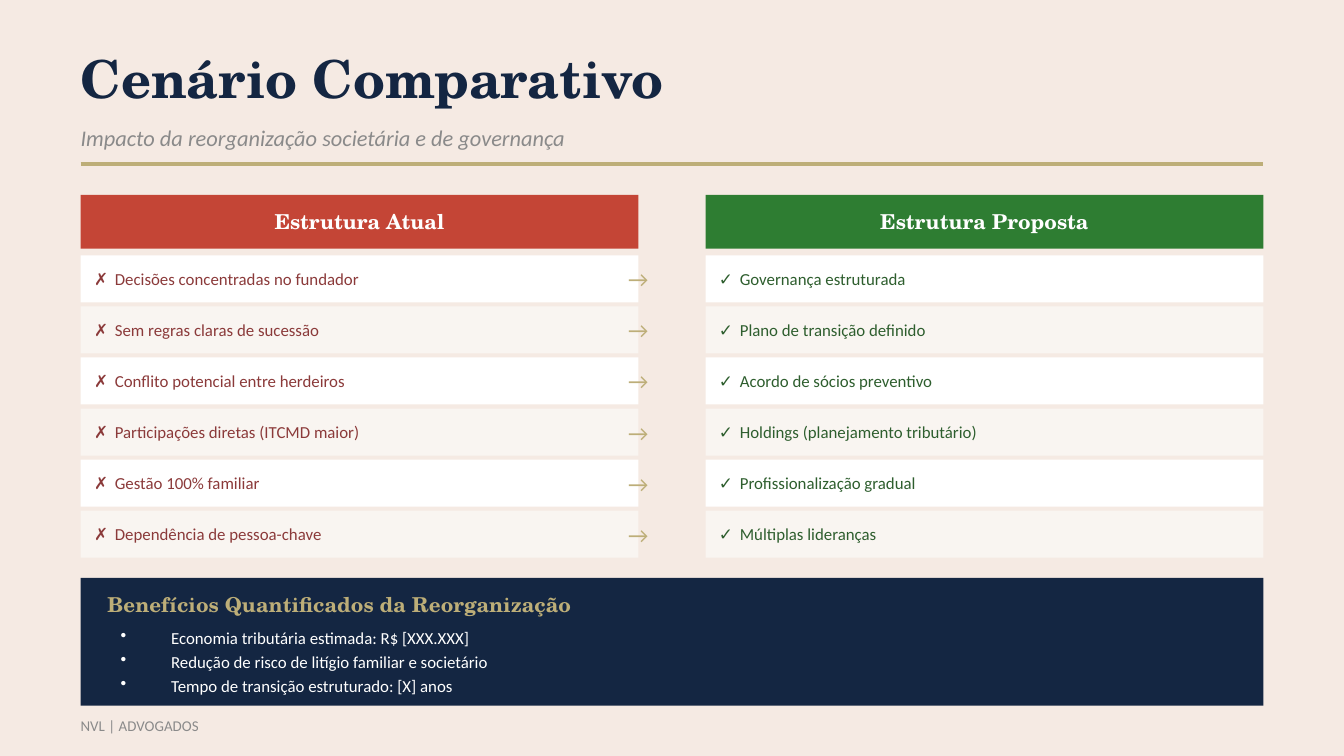
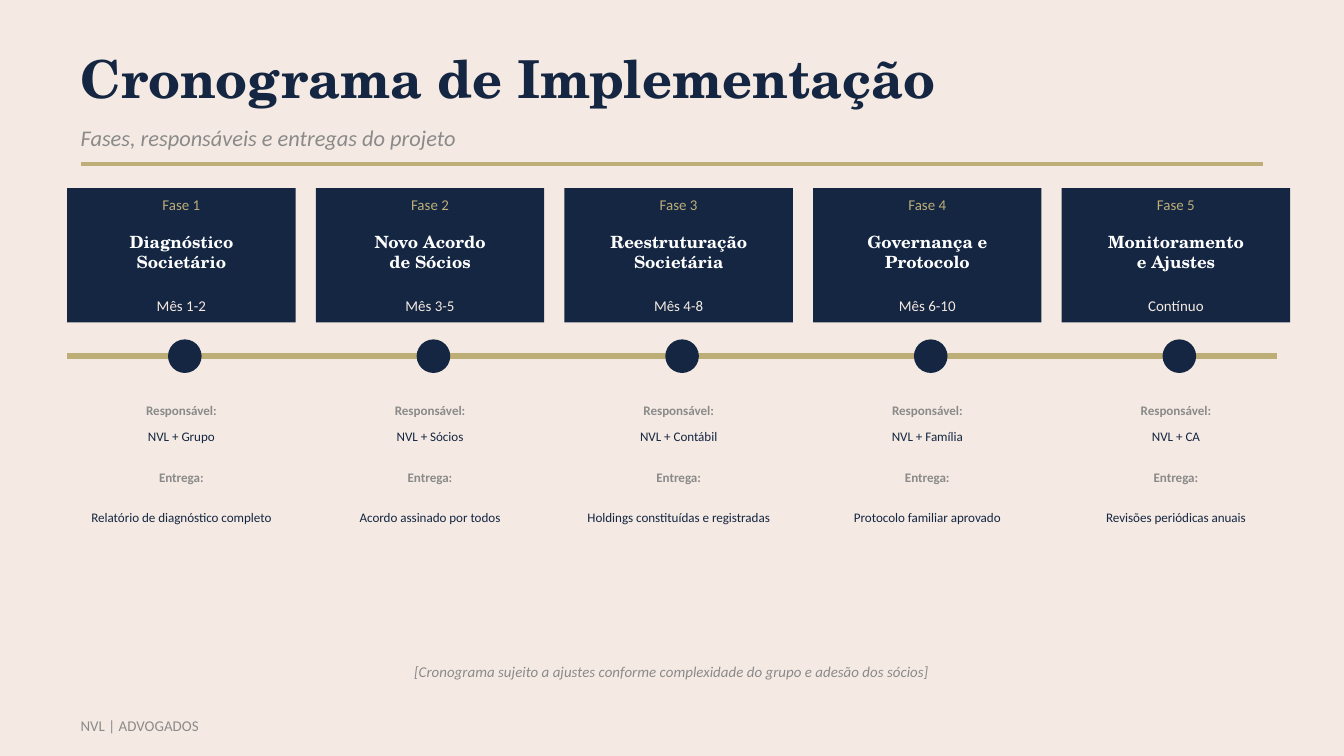
from dataclasses import dataclass
from typing import NamedTuple

from lxml.etree import SubElement
from pptx import Presentation
from pptx.dml.color import RGBColor
from pptx.enum.shapes import MSO_CONNECTOR, MSO_SHAPE
from pptx.enum.text import MSO_ANCHOR, PP_ALIGN
from pptx.oxml.ns import qn
from pptx.slide import Slide
from pptx.text.text import TextFrame
from pptx.util import Emu, Pt

EMU_PER_PX = 4572  # 200 px to the inch

COLOURS = {
    "background": "F5EAE3",
    "navy": "142642",
    "gold": "BDAE78",
    "grey": "8A8A8A",
    "white": "FFFFFF",
    "cream": "F9F5F1",
    "red": "C44536",
    "green": "2E7D32",
    "dark_red": "8B3A3A",
    "dark_green": "2E5E2E",
}
SERIF = "TeX Gyre Schola"
SANS = "Calibri"

MARGIN = 120
CONTENT_WIDTH = 1760


class Box(NamedTuple):
    left: int
    top: int
    width: int
    height: int


@dataclass(frozen=True)
class Style:
    size: int
    colour: str
    font: str = SANS
    bold: bool = False
    italic: bool = False
    align: PP_ALIGN = PP_ALIGN.LEFT


@dataclass(frozen=True)
class Scenario:
    left: int
    heading: str
    heading_fill: str
    mark: str
    item_colour: str
    items: tuple[str, ...]


@dataclass(frozen=True)
class Phase:
    title: tuple[str, ...]
    period: str
    owner: str
    delivery: str


CENTER = PP_ALIGN.CENTER
TITLE = Style(28, "navy", SERIF, bold=True)
SUBTITLE = Style(12, "grey", italic=True)
FOOTER = Style(8, "grey")
COLUMN_HEADING = Style(11, "white", SERIF, bold=True, align=CENTER)
ARROW = Style(12, "gold", align=CENTER)
BENEFITS_HEADING = Style(11, "gold", SERIF, bold=True)
BENEFIT = Style(9, "white")
PHASE_NUMBER = Style(8, "gold", align=CENTER)
PHASE_TITLE = Style(9, "white", SERIF, bold=True, align=CENTER)
PHASE_PERIOD = Style(8, "background", align=CENTER)
DETAIL_LABEL = Style(7, "grey", bold=True, align=CENTER)
DETAIL_VALUE = Style(7, "navy", align=CENTER)
NOTE = Style(8, "grey", italic=True, align=CENTER)

SCENARIOS = (
    Scenario(MARGIN, "Estrutura Atual", "red", "✗", "dark_red", (
        "Decisões concentradas no fundador",
        "Sem regras claras de sucessão",
        "Conflito potencial entre herdeiros",
        "Participações diretas (ITCMD maior)",
        "Gestão 100% familiar",
        "Dependência de pessoa-chave",
    )),
    Scenario(1050, "Estrutura Proposta", "green", "✓", "dark_green", (
        "Governança estruturada",
        "Plano de transição definido",
        "Acordo de sócios preventivo",
        "Holdings (planejamento tributário)",
        "Profissionalização gradual",
        "Múltiplas lideranças",
    )),
)
BENEFITS = (
    "Economia tributária estimada: R$ [XXX.XXX]",
    "Redução de risco de litígio familiar e societário",
    "Tempo de transição estruturado: [X] anos",
)
PHASES = (
    Phase(("Diagnóstico", "Societário"), "Mês 1-2", "NVL + Grupo",
          "Relatório de diagnóstico completo"),
    Phase(("Novo Acordo", "de Sócios"), "Mês 3-5", "NVL + Sócios",
          "Acordo assinado por todos"),
    Phase(("Reestruturação", "Societária"), "Mês 4-8", "NVL + Contábil",
          "Holdings constituídas e registradas"),
    Phase(("Governança e", "Protocolo"), "Mês 6-10", "NVL + Família",
          "Protocolo familiar aprovado"),
    Phase(("Monitoramento", "e Ajustes"), "Contínuo", "NVL + CA",
          "Revisões periódicas anuais"),
)


def px(length: int) -> Emu:
    return Emu(length * EMU_PER_PX)


def rgb(name: str) -> RGBColor:
    return RGBColor.from_string(COLOURS[name])


def add_filled_shape(slide: Slide, box: Box, colour: str,
                     kind: MSO_SHAPE = MSO_SHAPE.RECTANGLE) -> None:
    shape = slide.shapes.add_shape(kind, *map(px, box))
    shape.shadow.inherit = False
    shape.fill.solid()
    shape.fill.fore_color.rgb = rgb(colour)
    shape.line.fill.background()


def add_rule(slide: Slide, left: int, right: int, top: int, weight: int) -> None:
    """Draw a horizontal gold line."""
    connector = slide.shapes.add_connector(
        MSO_CONNECTOR.STRAIGHT, px(left), px(top), px(right), px(top))
    connector.line.color.rgb = rgb("gold")
    connector.line.width = Pt(weight)
    SubElement(connector._element.spPr, qn("a:effectLst"))


def add_text(slide: Slide, box: Box, style: Style, *lines: str,
             inset: tuple[int, int] = (0, 0)) -> TextFrame:
    """Write one paragraph per line, vertically centred in the box."""
    frame = slide.shapes.add_textbox(*map(px, box)).text_frame
    frame.word_wrap = True
    frame.vertical_anchor = MSO_ANCHOR.MIDDLE
    frame.margin_left = frame.margin_right = px(inset[0])
    frame.margin_top = frame.margin_bottom = px(inset[1])
    for index, line in enumerate(lines):
        paragraph = frame.add_paragraph() if index else frame.paragraphs[0]
        paragraph.alignment = style.align
        run = paragraph.add_run()
        run.text = line
        run.font.name = style.font
        run.font.size = Pt(style.size)
        run.font.bold = style.bold
        run.font.italic = style.italic
        run.font.color.rgb = rgb(style.colour)
    return frame


def add_marked_item(slide: Slide, box: Box, mark: str, item: str, colour: str) -> None:
    """Write a mark and its item, set apart by a tab stop."""
    frame = add_text(slide, box, Style(9, colour), f"{mark}\t{item}")
    properties = frame.paragraphs[0]._p.get_or_add_pPr()
    tabs = SubElement(properties, qn("a:tabLst"))
    SubElement(tabs, qn("a:tab"), pos=str(px(31)), algn="l")


def add_bullets(frame: TextFrame, indent: int, space_after: int) -> None:
    for paragraph in frame.paragraphs:
        paragraph.space_after = Pt(space_after)
        properties = paragraph._p.get_or_add_pPr()
        properties.set("marL", str(px(indent)))
        properties.set("indent", str(-px(indent)))
        SubElement(properties, qn("a:buChar"), char="•")


def add_base_slide(presentation: Presentation, title: str, subtitle: str) -> Slide:
    """Add a slide with the shared background, title, rule and footer."""
    slide = presentation.slides.add_slide(presentation.slide_layouts[6])
    slide.background.fill.solid()
    slide.background.fill.fore_color.rgb = rgb("background")
    add_text(slide, Box(MARGIN, 60, CONTENT_WIDTH, 110), TITLE, title)
    add_text(slide, Box(MARGIN, 170, CONTENT_WIDTH, 70), SUBTITLE, subtitle)
    add_rule(slide, MARGIN, MARGIN + CONTENT_WIDTH, 244, 2)
    add_text(slide, Box(MARGIN, 1050, 600, 60), FOOTER, "NVL | ADVOGADOS")
    return slide


def add_scenario(slide: Slide, scenario: Scenario) -> None:
    column_width, row_height, row_pitch = 830, 70, 76
    heading = Box(scenario.left, 290, column_width, 80)
    add_filled_shape(slide, heading, scenario.heading_fill)
    add_text(slide, heading, COLUMN_HEADING, scenario.heading)
    for row, item in enumerate(scenario.items):
        top = 380 + row * row_pitch
        fill = "cream" if row % 2 else "white"
        add_filled_shape(slide, Box(scenario.left, top, column_width, row_height), fill)
        add_marked_item(slide, Box(scenario.left + 20, top, 800, row_height),
                        scenario.mark, item, scenario.item_colour)
        if scenario is SCENARIOS[0]:
            add_text(slide, Box(910, top, 80, row_height), ARROW, "→")


def add_comparison_slide(presentation: Presentation) -> None:
    slide = add_base_slide(presentation, "Cenário Comparativo",
                           "Impacto da reorganização societária e de governança")
    for scenario in SCENARIOS:
        add_scenario(slide, scenario)
    add_filled_shape(slide, Box(MARGIN, 860, CONTENT_WIDTH, 190), "navy")
    add_text(slide, Box(160, 870, 1000, 60), BENEFITS_HEADING,
             "Benefícios Quantificados da Reorganização")
    benefits = add_text(slide, Box(160, 930, 1660, 110), BENEFIT, *BENEFITS,
                        inset=(20, 10))
    add_bullets(benefits, indent=75, space_after=2)


def add_phase(slide: Slide, number: int, left: int, phase: Phase) -> None:
    width = 340
    add_filled_shape(slide, Box(left + 150, 505, 50, 50), "navy", MSO_SHAPE.OVAL)
    add_filled_shape(slide, Box(left, 280, width, 200), "navy")
    texts = (
        (280, 50, PHASE_NUMBER, (f"Fase {number}",)),
        (320, 110, PHASE_TITLE, phase.title),
        (430, 50, PHASE_PERIOD, (phase.period,)),
        (590, 40, DETAIL_LABEL, ("Responsável:",)),
        (630, 40, DETAIL_VALUE, (phase.owner,)),
        (690, 40, DETAIL_LABEL, ("Entrega:",)),
        (730, 80, DETAIL_VALUE, (phase.delivery,)),
    )
    for top, height, style, lines in texts:
        add_text(slide, Box(left, top, width, height), style, *lines)


def add_schedule_slide(presentation: Presentation) -> None:
    slide = add_base_slide(presentation, "Cronograma de Implementação",
                           "Fases, responsáveis e entregas do projeto")
    add_rule(slide, 100, 1900, 530, 3)
    for index, phase in enumerate(PHASES):
        add_phase(slide, index + 1, 100 + index * 370, phase)
    add_text(slide, Box(MARGIN, 970, CONTENT_WIDTH, 60), NOTE,
             "[Cronograma sujeito a ajustes conforme complexidade do grupo"
             " e adesão dos sócios]")


def main() -> None:
    presentation = Presentation()
    presentation.slide_width = px(2000)
    presentation.slide_height = px(1125)
    add_comparison_slide(presentation)
    add_schedule_slide(presentation)
    presentation.save("out.pptx")


if __name__ == "__main__":
    main()
